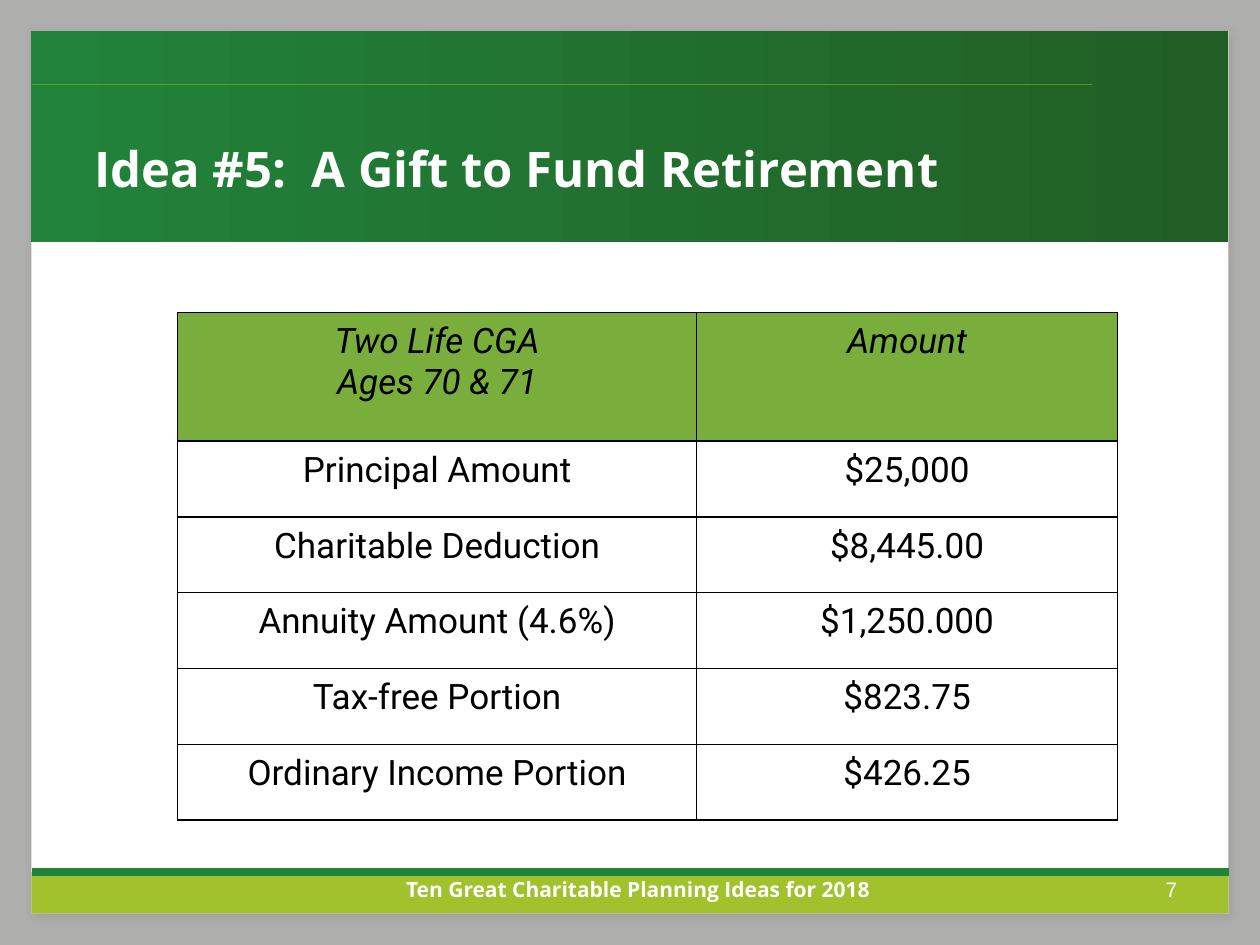
from dataclasses import dataclass

from lxml import etree
from pptx import Presentation
from pptx import util as u
from pptx.dml.color import RGBColor
from pptx.enum import shapes, text
from pptx.oxml import parse_xml
from pptx.oxml.ns import nsdecls, qn

Inches, Pt = u.Inches, u.Pt


@dataclass(frozen=True)
class Theme:
    backdrop: str = "AEAEAD"
    white: str = "FFFFFF"
    black: str = "000000"
    lime: str = "A1C12D"
    green: str = "21833A"
    dark_green: str = "215E25"
    hairline: str = "99CC00"
    header: str = "79AE3D"
    shadow: str = "808080"
    head_font: str = "Open Sans"
    body_font: str = "Roboto"
    number_font: str = "Arial"
    title: int = 28
    table: int = 20
    footer: int = 12


T = Theme()
ROWS = [
    ("Two Life CGA\nAges 70 & 71", "Amount"),
    ("Principal Amount", "$25,000"),
    ("Charitable Deduction", "$8,445.00"),
    ("Annuity Amount (4.6%)", "$1,250.000"),
    ("Tax-free Portion", "$823.75"),
    ("Ordinary Income Portion", "$426.25"),
]


def rgb(color):
    return RGBColor.from_string(color)


def add_rect(s, x, y, w, h, color):
    sp = s.shapes.add_shape(shapes.MSO_SHAPE.RECTANGLE,
                            Inches(x), Inches(y), Inches(w), Inches(h))
    sp.shadow.inherit = False
    sp.line.fill.background()
    sp.fill.solid()
    sp.fill.fore_color.rgb = rgb(color)
    return sp


def add_line(s, x1, x2, y, color, width):
    line = s.shapes.add_connector(shapes.MSO_CONNECTOR.STRAIGHT,
                                  Inches(x1), Inches(y), Inches(x2), Inches(y))
    line.line.color.rgb = rgb(color)
    line.line.width = Pt(width)
    etree.SubElement(line._element.spPr, qn("a:effectLst"))
    return line


def add_run(p, words, font, size, color, bold=False, italic=False):
    r = p.add_run()
    r.text = words
    r.font.name, r.font.size = font, Pt(size)
    r.font.bold, r.font.italic = bold, italic
    r.font.color.rgb = rgb(color)


def add_text(s, x, y, w, h, words, font, size, bold=False,
             align=text.PP_ALIGN.LEFT, anchor=text.MSO_ANCHOR.TOP):
    tf = s.shapes.add_textbox(Inches(x), Inches(y), Inches(w), Inches(h)).text_frame
    tf.word_wrap = True
    tf.vertical_anchor = anchor
    tf.margin_left = tf.margin_right = tf.margin_top = tf.margin_bottom = 0
    p = tf.paragraphs[0]
    p.alignment = align
    add_run(p, words, font, size, T.white, bold)


def add_page(s, x, y, w, h):
    """White page with a soft shadow on the grey backdrop."""
    add_rect(s, 0, 0, 10, 7.5, T.backdrop)
    page = add_rect(s, x, y, w, h, T.white)
    effects = page._element.spPr.find(qn("a:effectLst"))
    effects.append(parse_xml(
        f'<a:outerShdw {nsdecls("a")} blurRad="{Pt(5)}" dist="{Pt(2)}" dir="2700000">'
        f'<a:srgbClr val="{T.shadow}"><a:alpha val="37000"/></a:srgbClr></a:outerShdw>'))


def add_title_band(s, x, y, w, h, title):
    band = add_rect(s, x, y, w, h, T.green)
    band.fill.gradient()
    band.fill.gradient_angle = 180
    for stop, color, position in zip(band.fill.gradient_stops,
                                     (T.dark_green, T.green), (0, 1)):
        stop.color.rgb = rgb(color)
        stop.position = position
    # Translucent hairline
    line = add_line(s, x, x + 8.42, y + 0.42, T.hairline, 0.25)
    color = next(line._element.spPr.iter(qn("a:srgbClr")))
    etree.SubElement(color, qn("a:alpha")).set("val", "71000")
    add_text(s, x + 0.5, y + 0.67, w - 1, 0.83, title, T.head_font, T.title,
             bold=True, anchor=text.MSO_ANCHOR.MIDDLE)


def add_footer(s, x, y, w, h, caption, number):
    add_rect(s, x, y, w, h, T.lime)
    add_line(s, x, x + w, y, T.green, 4.5)
    add_text(s, x + 9, y + 0.04, 0.42, 0.19, number, T.number_font, T.footer)
    add_text(s, x + 2.15, y + 0.04, 5.33, 0.21, caption, T.head_font, T.footer,
             bold=True, align=text.PP_ALIGN.CENTER)


def style_cell(cell, words, header):
    cell.margin_left = cell.margin_right = Inches(0.07)
    cell.margin_top = cell.margin_bottom = Inches(0.07)
    cell.vertical_anchor = text.MSO_ANCHOR.TOP
    # Borders come before the fill in the cell properties
    for side in ("lnL", "lnR", "lnT", "lnB"):
        cell._tc.get_or_add_tcPr().append(parse_xml(
            f'<a:{side} {nsdecls("a")} w="{Pt(1)}"><a:solidFill>'
            f'<a:srgbClr val="{T.black}"/></a:solidFill></a:{side}>'))
    if header:
        cell.fill.solid()
        cell.fill.fore_color.rgb = rgb(T.header)
    else:
        cell.fill.background()
    tf = cell.text_frame
    for i, line in enumerate(words.split("\n")):
        p = tf.add_paragraph() if i else tf.paragraphs[0]
        p.alignment = text.PP_ALIGN.CENTER
        add_run(p, line, T.body_font, T.table, T.black, italic=header)


def add_gift_table(s, x, y, w, h, rows):
    header_h, first_w = 1.02, 4.12
    row_h = (h - header_h) / (len(rows) - 1)
    table = s.shapes.add_table(len(rows), 2, Inches(x), Inches(y),
                               Inches(w), Inches(h)).table
    table.first_row = table.horz_banding = False
    table.columns[0].width = Inches(first_w)
    table.columns[1].width = Inches(w - first_w)
    for i, row in enumerate(rows):
        table.rows[i].height = Inches(row_h if i else header_h)
        for j, words in enumerate(row):
            style_cell(table.cell(i, j), words, header=i == 0)


def main():
    prs = Presentation()
    prs.slide_width, prs.slide_height = Inches(10), Inches(7.5)
    s = prs.slides.add_slide(prs.slide_layouts[6])
    add_page(s, 0.25, 0.25, 9.5, 7)
    add_title_band(s, 0.25, 0.25, 9.5, 1.67, "Idea #5:  A Gift to Fund Retirement")
    add_footer(s, 0.25, 6.92, 9.5, 0.33,
               "Ten Great Charitable Planning Ideas for 2018", "7")
    add_gift_table(s, 1.41, 2.48, 7.46, 4.03, ROWS)
    prs.save("out.pptx")


if __name__ == "__main__":
    main()
